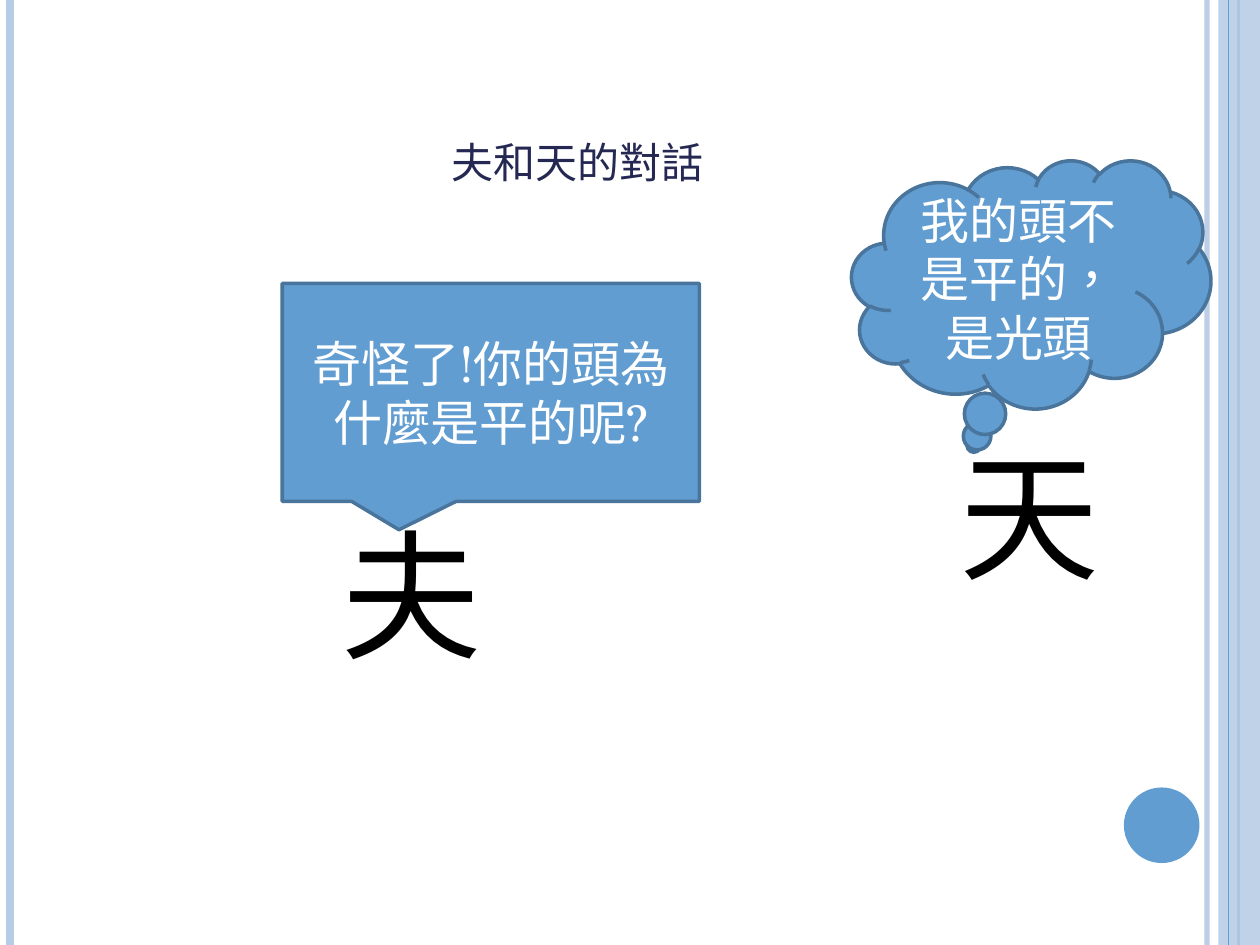
from typing import NamedTuple

from lxml.etree import SubElement
from pptx import Presentation
from pptx.dml.color import RGBColor
from pptx.enum.shapes import MSO_CONNECTOR, MSO_SHAPE
from pptx.enum.text import MSO_ANCHOR, MSO_AUTO_SIZE, PP_ALIGN
from pptx.oxml.ns import qn
from pptx.util import Inches, Pt

FONT = "TeX Gyre Schola"
HEX = {"pale": "B7CCE5", "blue": "629DD1", "edge": "49749B",
       "navy": "242852", "black": "000000", "white": "FFFFFF"}


class Rule(NamedTuple):
    x: float
    color: str
    width: float
    alpha: int = 100


class Glyph(NamedTuple):
    text: str
    x: float
    y: float


class Bubble(NamedTuple):
    kind: MSO_SHAPE
    box: tuple[float, float, float, float]
    tip: tuple[float, float]
    text: str


BACK = [Rule(9.58, "pale", 3, 93), Rule(0.08, "pale", 4.5), Rule(9.83, "blue", 1.5)]
FRONT = [Rule(9.75, "blue", 0.75)]
GLYPHS = [Glyph("夫", 2.61, 3.99), Glyph("天", 7.52, 3.36)]
BUBBLES = [
    Bubble(MSO_SHAPE.RECTANGULAR_CALLOUT, (2.24, 2.25, 3.31, 1.73),
           (-0.22, 0.63), "奇怪了!你的頭為什麼是平的呢?"),
    Bubble(MSO_SHAPE.CLOUD_CALLOUT, (6.76, 1.27, 2.85, 1.97),
           (-0.16, 0.65), "我的頭不是平的，是光頭"),
]


def rgb(name: str) -> RGBColor:
    return RGBColor.from_string(HEX[name])


def fade(shape, alpha: int) -> None:
    """Make the first colour of a shape partly transparent."""
    if alpha < 100:
        color = next(shape._element.spPr.iter(qn("a:srgbClr")))
        SubElement(color, qn("a:alpha"), val=str(alpha * 1000))


def write(frame, text: str, size: float, color: str, align=PP_ALIGN.CENTER, **form) -> None:
    for name, value in form.items():
        setattr(frame, name, value)
    par = frame.paragraphs[0]
    par.alignment = align
    run = par.add_run()
    run.text = text
    for name, value in {"name": FONT, "size": Pt(size), "bold": False}.items():
        setattr(run.font, name, value)
    run.font.color.rgb = rgb(color)
    props = run._r.get_or_add_rPr()
    props.set("lang", "zh-TW")
    SubElement(props, qn("a:ea"), typeface=FONT)


def draw_rule(slide, rule: Rule) -> None:
    x = Inches(rule.x)
    line = slide.shapes.add_connector(MSO_CONNECTOR.STRAIGHT, x, 0, x, Inches(7.5))
    line.line.color.rgb = rgb(rule.color)
    line.line.width = Pt(rule.width)
    fade(line, rule.alpha)
    SubElement(line._element.spPr, qn("a:effectLst"))


def draw_shape(slide, kind: MSO_SHAPE, box: tuple, fill: str, edge: str = "", alpha: int = 100):
    shape = slide.shapes.add_shape(kind, *map(Inches, box))
    shape.shadow.inherit = False
    shape.fill.solid()
    shape.fill.fore_color.rgb = rgb(fill)
    fade(shape, alpha)
    if edge:
        shape.line.color.rgb = rgb(edge)
        shape.line.width = Pt(2)
    else:
        shape.line.fill.background()
    return shape


def draw_title(slide, text: str) -> None:
    title = slide.shapes.title
    place = {"left": 0.5, "top": 0.3, "width": 8.17, "height": 1.25}
    for name, value in place.items():
        setattr(title, name, Inches(value))
    write(title.text_frame, text, 30, "navy", word_wrap=True,
          auto_size=MSO_AUTO_SIZE.NONE, vertical_anchor=MSO_ANCHOR.BOTTOM)
    title.text_frame.paragraphs[0].runs[0]._r.rPr.set("cap", "small")


def draw_glyph(slide, glyph: Glyph) -> None:
    box = slide.shapes.add_textbox(*map(Inches, (glyph.x, glyph.y, 1.32, 1.45)))
    write(box.text_frame, glyph.text, 80, "black", PP_ALIGN.LEFT,
          word_wrap=False, auto_size=MSO_AUTO_SIZE.SHAPE_TO_FIT_TEXT)


def draw_bubble(slide, bubble: Bubble) -> None:
    shape = draw_shape(slide, bubble.kind, bubble.box, "blue", "edge")
    for i, value in enumerate(bubble.tip):
        shape.adjustments[i] = value
    write(shape.text_frame, bubble.text, 28, "white",
          word_wrap=True, vertical_anchor=MSO_ANCHOR.MIDDLE)


def main() -> None:
    deck = Presentation()
    deck.slide_width, deck.slide_height = Inches(10), Inches(7.5)
    slide = deck.slides.add_slide(deck.slide_layouts[5])
    for rule in BACK:
        draw_rule(slide, rule)
    draw_shape(slide, MSO_SHAPE.RECTANGLE, (9.67, 0, 0.33, 7.5), "pale", alpha=87)
    for rule in FRONT:
        draw_rule(slide, rule)
    draw_shape(slide, MSO_SHAPE.OVAL, (8.92, 6.25, 0.6, 0.6), "blue")
    draw_title(slide, "夫和天的對話")
    for glyph in GLYPHS:
        draw_glyph(slide, glyph)
    for bubble in BUBBLES:
        draw_bubble(slide, bubble)
    deck.save("out.pptx")


if __name__ == "__main__":
    main()
